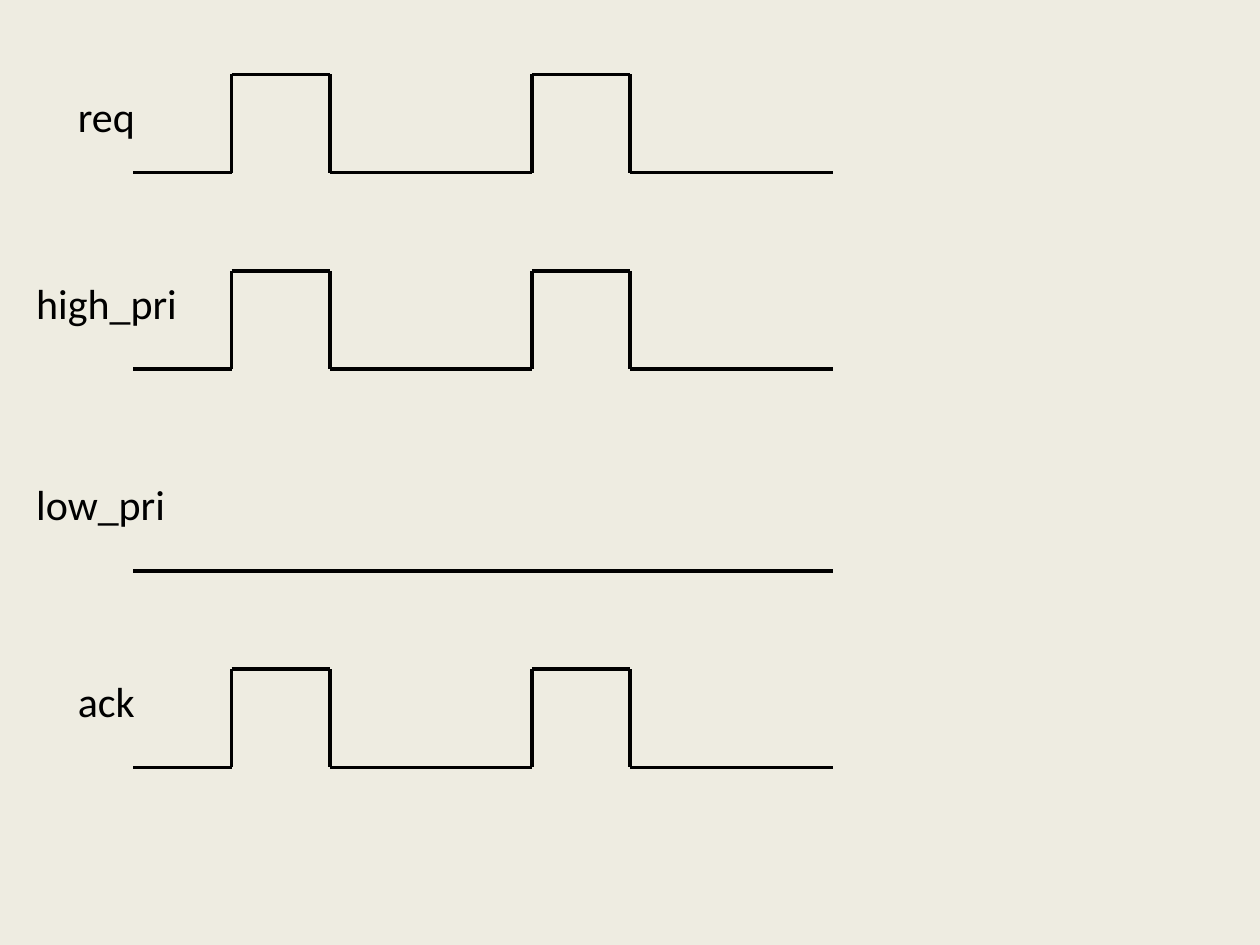
from itertools import pairwise

from pptx import Presentation
from pptx.dml.color import RGBColor
from pptx.enum.shapes import MSO_CONNECTOR
from pptx.enum.text import MSO_AUTO_SIZE
from pptx.oxml.ns import qn
from pptx.util import Cm, Pt
from lxml.etree import SubElement

INK = RGBColor(0x00, 0x00, 0x00)
PAPER = RGBColor(0xEE, 0xEC, 0xE1)
START, END = 2.69, 16.79
EDGES = (4.67, 6.65, 10.72, 12.7)
RISE = 1.98


def add_text(slide, text, left, top, width, height=1.28, size=24,
             font="Calibri", color=INK, wrap=False):
    box = slide.shapes.add_textbox(Cm(left), Cm(top), Cm(width), Cm(height))
    frame = box.text_frame
    frame.word_wrap = wrap
    frame.auto_size = MSO_AUTO_SIZE.SHAPE_TO_FIT_TEXT
    run = frame.paragraphs[0].add_run()
    run.text = text
    run.font.size = Pt(size)
    run.font.name = font
    run.font.color.rgb = color


def add_line(shapes, start, end):
    line = shapes.add_connector(MSO_CONNECTOR.STRAIGHT,
                                *map(Cm, start + end))
    line.line.color.rgb = INK
    line.line.width = Pt(2)
    SubElement(line._element.spPr, qn("a:effectLst"))


def add_wave(shapes, base, edges):
    points = [(START, base)]
    level, other = base, base - RISE
    for edge in edges:
        points += [(edge, level), (edge, other)]
        level, other = other, level
    points.append((END, level))
    for start, end in pairwise(points):
        add_line(shapes, start, end)


def main():
    deck = Presentation()
    deck.slide_width, deck.slide_height = Cm(25.4), Cm(19.05)
    slide = deck.slides.add_slide(deck.slide_layouts[6])
    fill = slide.background.fill
    fill.solid()
    fill.fore_color.rgb = PAPER

    signals = (
        ("req", 1.32, 1.7, 1.68, 3.48, EDGES, True),
        ("high_pri", 0.48, 5.46, 3.38, 7.44, EDGES, False),
        ("low_pri", 0.48, 9.53, 3.12, 11.51, (), False),
        ("ack", 1.32, 13.49, 2.08, 15.47, EDGES, True),
    )
    for name, left, top, width, base, edges, grouped in signals:
        shapes = slide.shapes
        if grouped:
            shapes = shapes.add_group_shape().shapes
        add_wave(shapes, base, edges)
        add_text(slide, name, left, top, width, wrap=name == "ack")

    deck.save("out.pptx")


if __name__ == "__main__":
    main()
